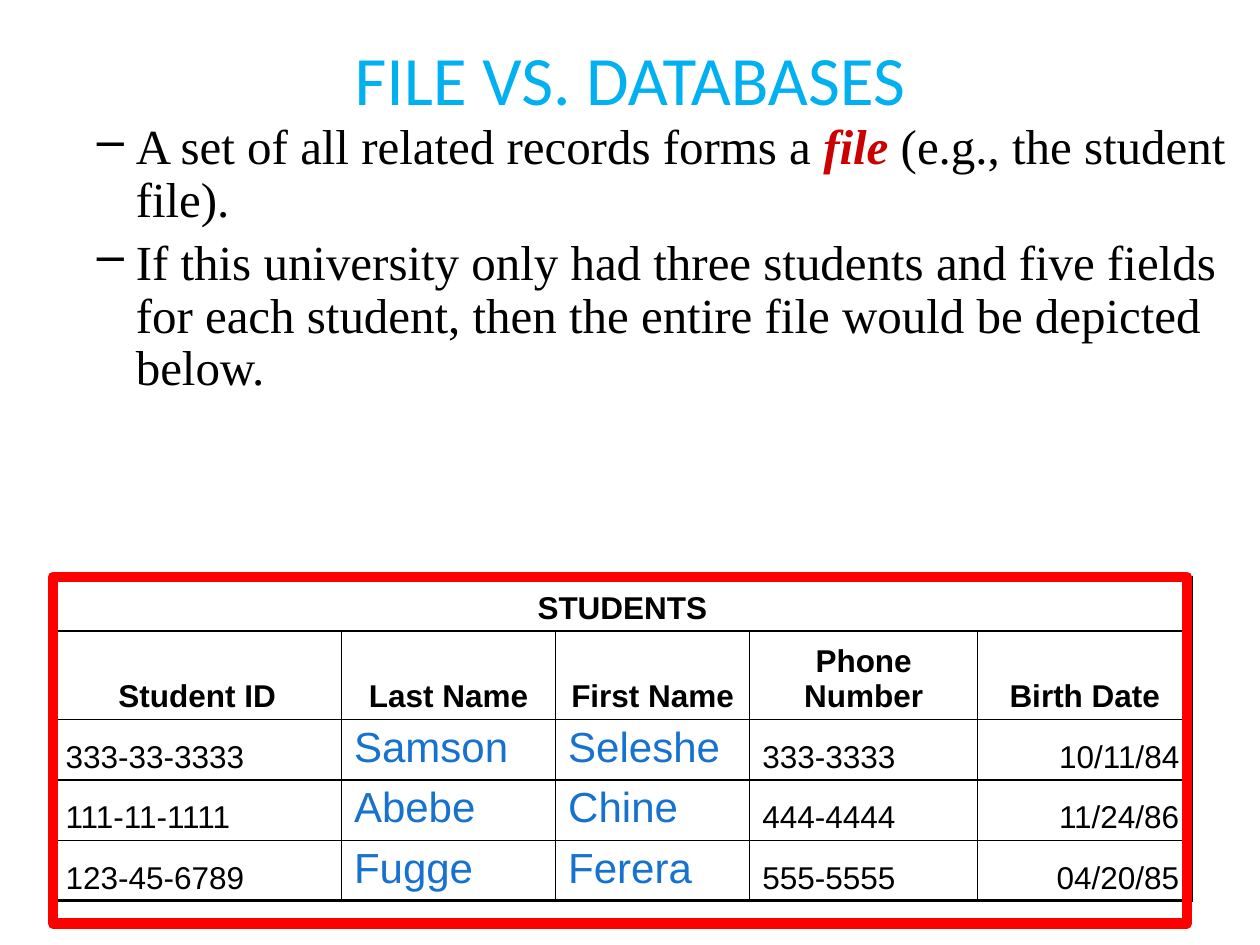
from lxml import etree
from pptx import Presentation
from pptx import util as u
from pptx.dml.color import RGBColor
from pptx.enum import shapes, text
from pptx.oxml.ns import qn

STUDENTS = [
    ("333-33-3333", "Samson", "Seleshe", "333-3333", "10/11/84"),
    ("111-11-1111", "Abebe", "Chine", "444-4444", "11/24/86"),
    ("123-45-6789", "Fugge", "Ferera", "555-5555", "04/20/85"),
]
HEADERS = ("Student ID", "Last Name", "First Name", "Phone Number", "Birth Date")
POINTS = [
    [
        ("A set of all related records forms a ", {}),
        ("file", dict(color="CC0000", bold=True, italic=True)),
        (" (e.g., the student file).", {}),
    ],
    [("If this university only had three students and five fields for each student, "
      "then the entire file would be depicted below.", {})],
]


def rgb(value):
    return RGBColor.from_string(value)


def add_text(p, content, font="Arial", size=18, color="000000", bold=False,
             italic=False, align=None):
    r = p.add_run()
    r.text = content
    r.font.name = font
    r.font.size = u.Pt(size)
    r.font.color.rgb = rgb(color)
    r.font.bold = bold
    r.font.italic = italic
    if align is not None:
        p.alignment = align


def set_borders(cell, **widths):
    pr = cell._tc.get_or_add_tcPr()
    for i, (side, width) in enumerate(widths.items()):
        ln = etree.Element(qn(f"a:ln{side}"), w=str(u.Pt(width)))
        fill = etree.SubElement(ln, qn("a:solidFill"))
        etree.SubElement(fill, qn("a:srgbClr"), val="000000")
        pr.insert(i, ln)


class Deck:
    body_font = "Times New Roman"
    body_size = 28
    name_style = dict(size=24, color="1672CE")
    center = text.PP_ALIGN.CENTER

    def __init__(self, prs):
        self.s = prs.slides.add_slide(prs.slide_layouts[5])

    def title(self, content, box):
        sp = self.s.shapes.title
        sp.left, sp.top, sp.width, sp.height = map(u.Inches, box)
        tf = sp.text_frame
        tf.auto_size = text.MSO_AUTO_SIZE.NONE
        tf.vertical_anchor = text.MSO_ANCHOR.MIDDLE
        add_text(tf.paragraphs[0], content, font="Calibri", size=39.6,
                 color="00B0F0", align=self.center)

    def bullets(self, points, box):
        tf = self.s.shapes.add_textbox(*map(u.Inches, box)).text_frame
        tf.word_wrap = True
        for i, runs in enumerate(points):
            p = tf.add_paragraph() if i else tf.paragraphs[0]
            p.line_spacing = 0.9
            p.space_before = u.Pt(self.body_size * 0.2)
            pr = p._p.get_or_add_pPr()
            pr.set("marL", str(u.Inches(0.81)))
            pr.set("indent", str(u.Inches(-0.31)))
            etree.SubElement(pr, qn("a:buChar"), char="–")
            for content, style in runs:
                add_text(p, content, font=self.body_font, size=self.body_size, **style)

    def table(self, heading, headers, records, box, cols, rows):
        shape = self.s.shapes.add_table(len(rows), len(cols), *map(u.Inches, box))
        table = shape.table
        table.first_row = table.horz_banding = False
        for col, width in zip(table.columns, cols):
            col.width = u.Inches(width)
        for row, height in zip(table.rows, rows):
            row.height = u.Inches(height)
        table.cell(0, 0).merge(table.cell(0, len(cols) - 1))
        grid = [(heading,) + ("",) * (len(cols) - 1), headers, *records]
        last_row, last_col = len(rows) - 1, len(cols) - 1
        for i, values in enumerate(grid):
            for j, value in enumerate(values):
                cell = table.cell(i, j)
                self.cell(cell, value, i < 2, j)
                set_borders(cell, L=1 if j else 2, R=2 if j == last_col else 1,
                            T=1 if i else 2, B=2 if i == last_row else 1)

    def cell(self, cell, value, header, col):
        cell.fill.background()
        cell.margin_top = cell.margin_bottom = u.Inches(0.04)
        is_name = not header and col in (1, 2)
        cell.vertical_anchor = text.MSO_ANCHOR.TOP if is_name else text.MSO_ANCHOR.BOTTOM
        if not value:
            return
        p = cell.text_frame.paragraphs[0]
        if header:
            add_text(p, value, bold=True, align=self.center)
        elif is_name:
            p.space_before = u.Pt(4.8)
            add_text(p, value, **self.name_style)
        else:
            add_text(p, value, align=text.PP_ALIGN.RIGHT if col == 4 else None)

    def frame(self, box, color, width):
        sp = self.s.shapes.add_shape(shapes.MSO_SHAPE.RECTANGLE, *map(u.Inches, box))
        sp.shadow.inherit = False
        sp.fill.background()
        sp.line.color.rgb = rgb(color)
        sp.line.width = u.Pt(width)


def main():
    prs = Presentation()
    prs.slide_width, prs.slide_height = u.Inches(10), u.Inches(7.5)
    deck = Deck(prs)
    deck.title("FILE VS. DATABASES", (0.5, 0.32, 9, 0.6))
    deck.bullets(POINTS, (0.17, 0.92, 9.67, 3.5))
    deck.table("STUDENTS", HEADERS, STUDENTS, (0.42, 4.58, 9.03, 2.54),
               cols=(2.29, 1.7, 1.54, 1.81, 1.7), rows=(0.43, 0.7, 0.47, 0.47, 0.47))
    deck.frame((0.42, 4.58, 9, 2.75), "FF0000", 6)
    prs.save("out.pptx")


if __name__ == "__main__":
    main()
